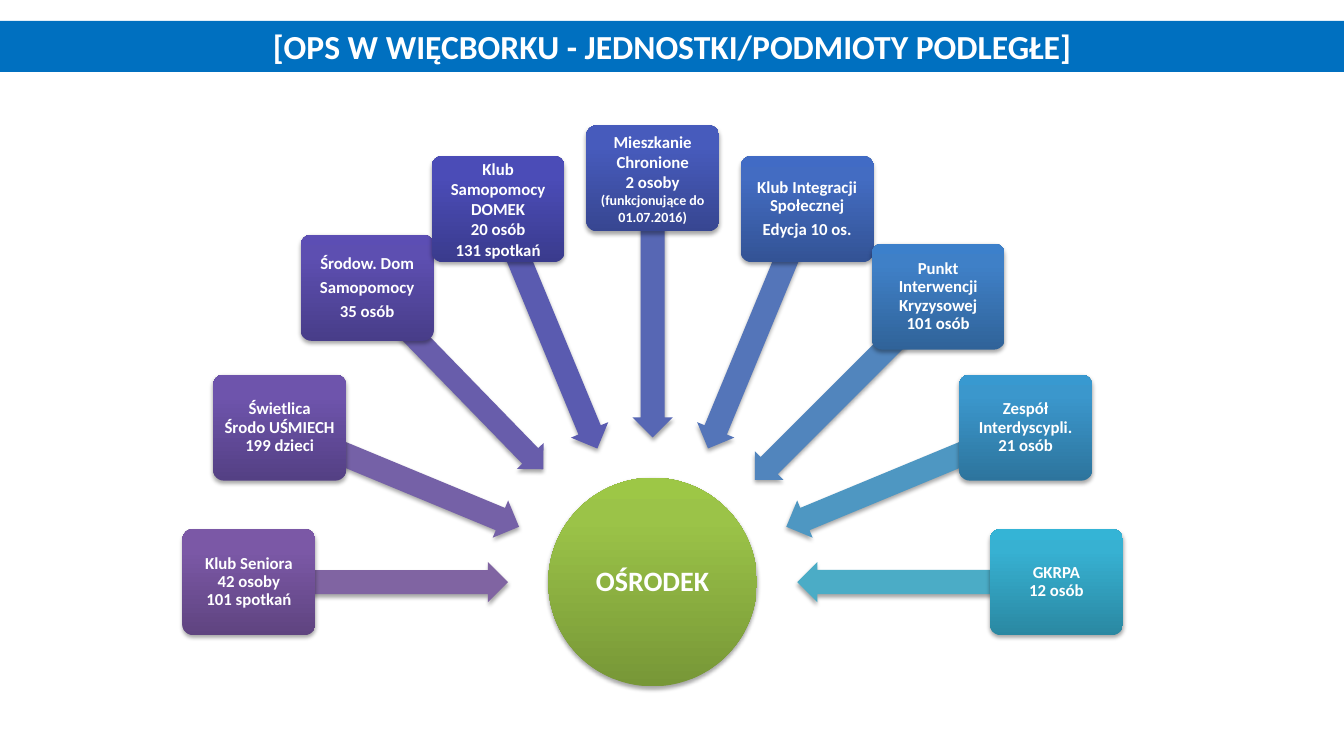
import copy
import dataclasses
import math
import typing

import lxml.etree
import pptx
import pptx.dml.color
import pptx.enum.shapes
import pptx.enum.text
import pptx.oxml.ns
import pptx.util

Pt = pptx.util.Pt
qn = pptx.oxml.ns.qn
SHAPE = pptx.enum.shapes.MSO_SHAPE

HUB_X, HUB_Y, HUB_SIZE = 466.2, 415.8, 149
BOX_W, BOX_H, BOX_RADIUS = 95, 75.8, 288.4
ARROW_RADIUS = 186.8
STEP = 22.5
AFTER = 4.2


@dataclasses.dataclass
class Line:
    text: str
    spacing: float = 0.9
    after: float = 0
    size: float = 12


@dataclasses.dataclass
class Unit:
    lines: list[Line]
    arrow: str
    gradient: tuple[str, str, str]
    lift: float = 0
    arrow_lift: float = 0
    arrow_w: float = 167
    arrow_h: float = 28.8
    turn: float = 0


UNITS = [
    Unit([Line("Klub Seniora"), Line("42 osoby"), Line("101 spotkań")],
         "8064A2", ("5F4480", "7B58A6", "7C57A8")),
    Unit([Line("Świetlica"), Line("Środo UŚMIECH"), Line("199 dzieci")],
         "7561A7", ("544084", "6E54AC", "6D52AE")),
    Unit([Line("Środow. Dom", after=AFTER), Line("Samopomocy", after=AFTER), Line("35 osób")],
         "685DAB", ("483D89", "5D4FB1", "5C4EB4"),
         lift=6.3, arrow_lift=4, arrow_w=154.8, arrow_h=26.6, turn=0.8),
    Unit([Line("Klub Samopomocy DOMEK", 1), Line("20 osób", 1), Line("131 spotkań", 1)],
         "5A5BB0", ("3A3B8D", "4B4CB7", "494BBA")),
    Unit([Line("Mieszkanie Chronione", 1), Line("2 osoby", 1),
          Line("(funkcjonujące do 01.07.2016)", 1, size=10)],
         "5767B4", ("374691", "475BBC", "455ABF")),
    Unit([Line("Klub Integracji Społecznej", after=AFTER), Line("Edycja 10 os.")],
         "5475B9", ("335395", "436CC2", "416BC5")),
    Unit([Line("Punkt Interwencji Kryzysowej"), Line("101 osób")],
         "5185BD", ("306399", "3F80C7", "3C80CB")),
    Unit([Line("Zespół Interdyscypli."), Line("21 osób")],
         "4E97C2", ("2D749D", "3B97CC", "3899D0")),
    Unit([Line("GKRPA"), Line("12 osób")],
         "4BACC6", ("2A88A2", "37B1D2", "34B4D6")),
]


def rgb(color: str) -> pptx.dml.color.RGBColor:
    return pptx.dml.color.RGBColor.from_string(color)


def apply(target: typing.Any, values: dict[str, typing.Any]) -> None:
    for name, value in values.items():
        setattr(target, name, value)


def add_shadow(sp) -> None:
    sp.shadow.inherit = False
    effects = sp._element.spPr.find(qn("a:effectLst"))
    outer = lxml.etree.SubElement(
        effects, qn("a:outerShdw"), blurRad=str(Pt(3.1)), dist=str(Pt(1.8)),
        dir="5400000", rotWithShape="0")
    black = lxml.etree.SubElement(outer, qn("a:srgbClr"), val="000000")
    lxml.etree.SubElement(black, qn("a:alpha"), val="35000")


def fill_gradient(sp, colors: tuple[str, str, str]) -> None:
    """Fill from the bottom up, with stops at 0, 80 and 100 percent."""
    sp.fill.gradient()
    sp.fill.gradient_angle = 90
    last = sp._element.spPr.find(".//" + qn("a:gs") + "[last()]")
    last.addnext(copy.deepcopy(last))
    for stop, position, color in zip(sp.fill.gradient_stops, (0, 0.8, 1), colors):
        stop.position = position
        stop.color.rgb = rgb(color)


def add_centered(s, kind, x: float, y: float, w: float, h: float):
    """Add an unlined shape with a shadow around the centre x, y."""
    sp = s.shapes.add_shape(kind, Pt(x - w / 2), Pt(y - h / 2), Pt(w), Pt(h))
    sp.line.fill.background()
    add_shadow(sp)
    return sp


def write_lines(sp, lines: list[Line], inset: float) -> None:
    tf = sp.text_frame
    margins = dict.fromkeys(
        ("margin_left", "margin_top", "margin_right", "margin_bottom"), Pt(inset))
    apply(tf, margins | {"word_wrap": True,
                         "auto_size": pptx.enum.text.MSO_AUTO_SIZE.NONE,
                         "vertical_anchor": pptx.enum.text.MSO_ANCHOR.MIDDLE})
    for i, line in enumerate(lines):
        p = tf.add_paragraph() if i else tf.paragraphs[0]
        apply(p, {"alignment": pptx.enum.text.PP_ALIGN.CENTER,
                  "line_spacing": line.spacing,
                  "space_before": Pt(0), "space_after": Pt(line.after)})
        r = p.add_run()
        r.text = line.text
        apply(r.font, {"name": "Calibri", "size": Pt(line.size), "bold": True})
        r.font.color.rgb = rgb("FFFFFF")


def add_title(s) -> None:
    sp = s.shapes.title
    apply(sp, {"left": Pt(0), "top": Pt(15), "width": Pt(960), "height": Pt(36.3)})
    sp.fill.solid()
    sp.fill.fore_color.rgb = rgb("0070C0")
    write_lines(sp, [Line("[OPS W WIĘCBORKU - JEDNOSTKI/PODMIOTY PODLEGŁE]", 1, size=24)], 3.6)


def add_hub(s) -> None:
    sp = add_centered(s, SHAPE.OVAL, HUB_X, HUB_Y, HUB_SIZE, HUB_SIZE)
    fill_gradient(sp, ("779737", "9BC348", "9DC746"))
    write_lines(sp, [Line("OŚRODEK", size=20)], 0.7)


def add_unit(s, unit: Unit, angle: float) -> None:
    """Place a box on the arc at the angle, with its arrow towards the hub."""
    dx, dy = math.cos(math.radians(angle)), math.sin(math.radians(angle))
    arrow = add_centered(s, SHAPE.LEFT_ARROW, HUB_X + ARROW_RADIUS * dx,
                         HUB_Y - ARROW_RADIUS * dy - unit.arrow_lift,
                         unit.arrow_w, unit.arrow_h)
    arrow.rotation = (360 - angle + unit.turn) % 360
    arrow.adjustments[0], arrow.adjustments[1] = 0.6, 0.5
    arrow.fill.solid()
    arrow.fill.fore_color.rgb = rgb(unit.arrow)

    box = add_centered(s, SHAPE.ROUNDED_RECTANGLE, HUB_X + BOX_RADIUS * dx,
                       HUB_Y - BOX_RADIUS * dy - unit.lift, BOX_W, BOX_H)
    box.adjustments[0] = 0.1
    fill_gradient(box, unit.gradient)
    write_lines(box, unit.lines, 2.2)


def main() -> None:
    prs = pptx.Presentation()
    apply(prs, {"slide_width": Pt(960), "slide_height": Pt(540)})
    s = prs.slides.add_slide(prs.slide_layouts[5])
    add_title(s)
    add_hub(s)
    for i, unit in enumerate(UNITS):
        add_unit(s, unit, 180 - i * STEP)
    prs.save("out.pptx")


if __name__ == "__main__":
    main()
